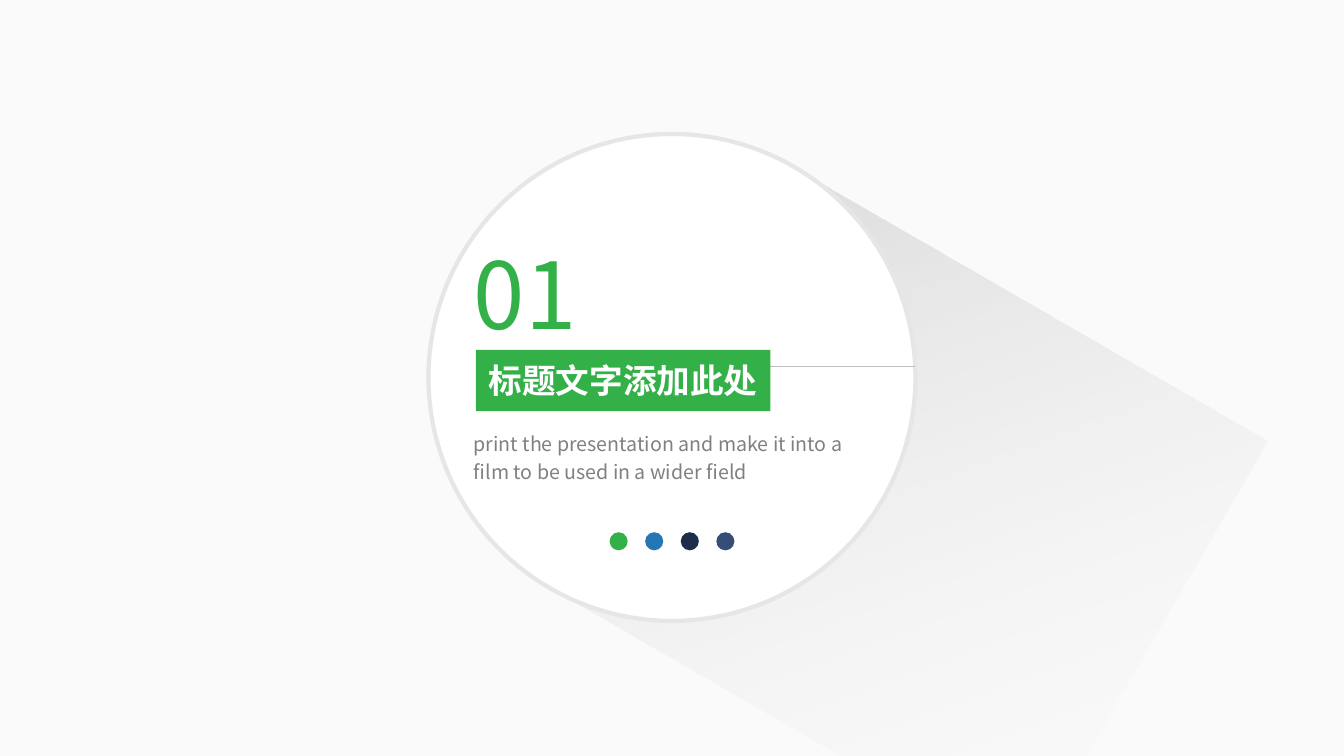
from lxml import etree
from pptx import Presentation
from pptx.dml.color import RGBColor
from pptx.enum.shapes import MSO_CONNECTOR, MSO_SHAPE
from pptx.enum.text import MSO_ANCHOR, MSO_AUTO_SIZE, PP_ALIGN
from pptx.oxml.ns import qn
from pptx.util import Inches, Pt

RECT, OVAL = MSO_SHAPE.RECTANGLE, MSO_SHAPE.OVAL
STRAIGHT = MSO_CONNECTOR.STRAIGHT
TOP, NO_FIT = MSO_ANCHOR.TOP, MSO_AUTO_SIZE.NONE
LEFT, CENTER = PP_ALIGN.LEFT, PP_ALIGN.CENTER

BACKGROUND = RGBColor(0xFA, 0xFA, 0xFA)
WHITE = RGBColor(0xFF, 0xFF, 0xFF)
BLACK = RGBColor(0x00, 0x00, 0x00)
PALE = RGBColor(0xF2, 0xF2, 0xF2)
RING = RGBColor(0xE7, 0xE6, 0xE6)
RULE = RGBColor(0xBF, 0xBF, 0xBF)
GRAY = RGBColor(0x80, 0x80, 0x80)
GREEN = RGBColor(0x33, 0xB0, 0x48)
BLUE = RGBColor(0x25, 0x76, 0xB5)
NAVY = RGBColor(0x1D, 0x2E, 0x4B)
SLATE = RGBColor(0x36, 0x4D, 0x76)
FONT = "Noto Sans CJK SC"

# Content: wording, box (left, top, width, height), paragraph and font formats
NUMBER = ("01", (4.6, 2.3, 1.45, 1.21), {"alignment": LEFT},
          {"size": Pt(66), "color": GREEN})
HEADING = ("标题文字添加此处", (4.72, 3.52, 2.92, 0.5), {"alignment": CENTER},
           {"size": Pt(24), "bold": True, "color": WHITE})
SUMMARY = ("print the presentation and make it into a film to be used in a wider field",
           (4.6, 4.19, 4.08, 0.67), {"alignment": LEFT, "line_spacing": 1.2},
           {"size": Pt(14), "color": GRAY})
SHADOW_STOPS = [(BLACK, 15), (PALE, 0)]  # colour, opacity in percent
DOT_COLORS = [GREEN, BLUE, NAVY, SLATE]

# Layout in inches
SLIDE_W, SLIDE_H = 13.33, 7.5
SHADOW_BOX = (6.12, 2.65, 5.62, 4.82)
DISC_BOX = (4.25, 1.33, 4.83, 4.83)
BANNER_BOX = (4.72, 3.47, 2.92, 0.61)
RULE_Y = 3.63
DOT_TOP, DOT_SIZE, DOT_STEP = 5.28, 0.18, 0.353


def inches(values):
    return [Inches(value) for value in values]


def add_plain_shape(slide, preset, box, fill=None):
    shape = slide.shapes.add_shape(preset, *inches(box))
    shape.shadow.inherit = False
    shape.line.fill.background()
    if fill is not None:
        shape.fill.solid()
        shape.fill.fore_color.rgb = fill
    return shape


def write(shape, content):
    text, box, paragraph_format, font_format = content
    for name, value in zip(("left", "top", "width", "height"), inches(box)):
        setattr(shape, name, value)
    frame = shape.text_frame
    frame.text = text
    frame_format = {"word_wrap": True, "auto_size": NO_FIT, "vertical_anchor": TOP}
    for name, value in frame_format.items():
        setattr(frame, name, value)
    paragraph = frame.paragraphs[0]
    for name, value in paragraph_format.items():
        setattr(paragraph, name, value)
    font = paragraph.runs[0].font
    for name, value in {"name": FONT, **font_format}.items():
        if name == "color":
            font.color.rgb = value
        else:
            setattr(font, name, value)
    # East Asian glyphs take their own font entry
    latin = shape.element.find(".//" + qn("a:latin"))
    east_asian = etree.Element(qn("a:ea"), typeface=FONT)
    latin.addnext(east_asian)


def add_long_shadow(slide):
    shadow = add_plain_shape(slide, RECT, SHADOW_BOX)
    shadow.rotation = 30
    shadow.fill.gradient()
    shadow.fill.gradient_angle = 320  # counter-clockwise, 40 degrees clockwise
    for stop, (color, _) in zip(shadow.fill.gradient_stops, SHADOW_STOPS):
        stop.color.rgb = color
    stop_colors = shadow.element.iterfind(".//" + qn("a:gs") + "/" + qn("a:srgbClr"))
    for stop_color, (_, opacity) in zip(stop_colors, SHADOW_STOPS):
        etree.SubElement(stop_color, qn("a:alpha"), val=str(opacity * 1000))


def add_rule(slide):
    start = BANNER_BOX[0] + BANNER_BOX[2]
    end = DISC_BOX[0] + DISC_BOX[2]
    rule = slide.shapes.add_connector(STRAIGHT, *inches((start, RULE_Y, end, RULE_Y)))
    rule.line.color.rgb = RULE
    rule.line.width = Pt(0.5)
    etree.SubElement(rule.element.find(qn("p:spPr")), qn("a:effectLst"))


def main():
    prs = Presentation()
    prs.slide_width, prs.slide_height = inches((SLIDE_W, SLIDE_H))
    slide = prs.slides.add_slide(prs.slide_layouts[5])
    slide.background.fill.solid()
    slide.background.fill.fore_color.rgb = BACKGROUND

    # Disc with its long shadow
    add_long_shadow(slide)
    disc = add_plain_shape(slide, OVAL, DISC_BOX, WHITE)
    disc.line.color.rgb = RING
    disc.line.width = Pt(3)
    add_rule(slide)

    # Summary, heading on its banner, section number
    write(slide.shapes.add_textbox(0, 0, 0, 0), SUMMARY)
    banner = add_plain_shape(slide, RECT, BANNER_BOX, GREEN)
    heading = slide.shapes.title
    banner.element.addnext(heading.element)
    write(heading, HEADING)
    write(slide.shapes.add_textbox(0, 0, 0, 0), NUMBER)

    # Row of dots centred under the text
    row_width = DOT_STEP * (len(DOT_COLORS) - 1) + DOT_SIZE
    row_left = DISC_BOX[0] + (DISC_BOX[2] - row_width) / 2
    for index, color in enumerate(DOT_COLORS):
        dot_left = row_left + index * DOT_STEP
        add_plain_shape(slide, OVAL, (dot_left, DOT_TOP, DOT_SIZE, DOT_SIZE), color)

    prs.save("out.pptx")


if __name__ == "__main__":
    main()
